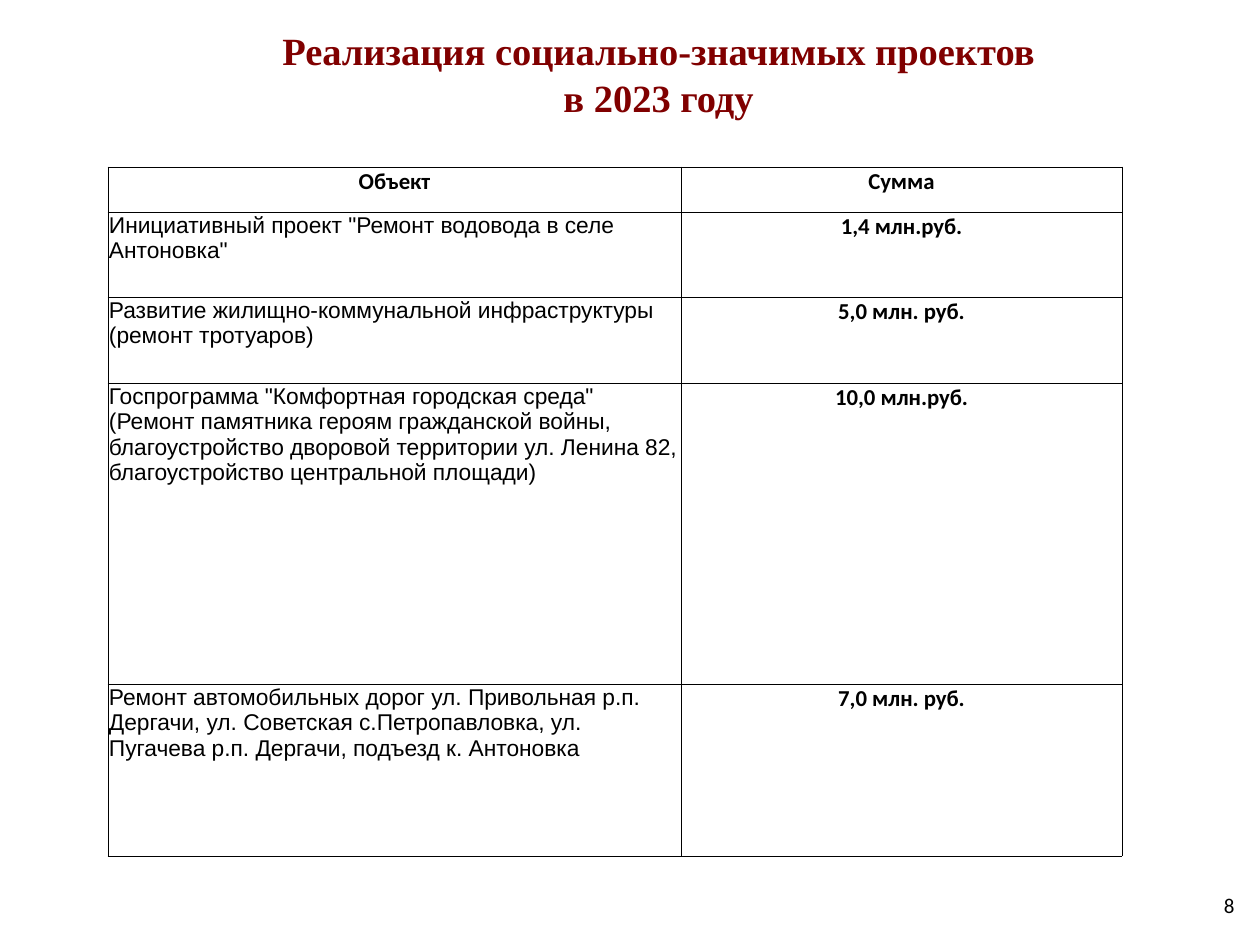
from dataclasses import dataclass

from lxml.etree import SubElement
from pptx import Presentation
from pptx.dml.color import RGBColor
from pptx.enum.text import MSO_ANCHOR, PP_ALIGN
from pptx.oxml.ns import qn
from pptx.table import Table, _Cell
from pptx.text.text import TextFrame
from pptx.util import Emu, Pt

PIXELS_PER_INCH = 126
BLACK = "000000"
MAROON = "800000"


@dataclass(frozen=True)
class TextStyle:
    font: str
    size: int
    color: str
    bold: bool
    align: PP_ALIGN


@dataclass(frozen=True)
class Project:
    name: str
    amount: str
    height: int


TITLE_STYLE = TextStyle("Times New Roman", 22, MAROON, True, PP_ALIGN.CENTER)
NUMBER_STYLE = TextStyle("Calibri", 12, BLACK, False, PP_ALIGN.RIGHT)
AMOUNT_STYLE = TextStyle("Calibri", 13, BLACK, True, PP_ALIGN.CENTER)
NAME_STYLE = TextStyle("Arial", 13, BLACK, False, PP_ALIGN.LEFT)

COLUMN_WIDTHS = (573, 441)
HEADER_HEIGHT = 45
PROJECTS = (
    Project('Инициативный проект "Ремонт водовода в селе Антоновка"', "1,4 млн.руб.", 85),
    Project(
        "Развитие жилищно-коммунальной инфраструктуры (ремонт тротуаров)",
        "5,0 млн. руб.",
        86,
    ),
    Project(
        'Госпрограмма "Комфортная городская среда" (Ремонт памятника героям '
        "гражданской войны, благоустройство дворовой территории ул. Ленина 82, "
        "благоустройство центральной площади)",
        "10,0 млн.руб.",
        301,
    ),
    Project(
        "Ремонт автомобильных дорог ул. Привольная р.п. Дергачи, ул. Советская "
        "с.Петропавловка, ул. Пугачева р.п. Дергачи, подъезд к. Антоновка",
        "7,0 млн. руб.",
        172,
    ),
)


def px(length: int) -> Emu:
    return Emu(round(length * 914400 / PIXELS_PER_INCH))


def rgb(value: str) -> RGBColor:
    return RGBColor.from_string(value)


def write(frame: TextFrame, text: str, style: TextStyle) -> None:
    frame.text = text
    frame.word_wrap = True
    for para in frame.paragraphs:
        para.alignment = style.align
        for span in para.runs:
            span.font.name = style.font
            span.font.size = Pt(style.size)
            span.font.bold = style.bold
            span.font.color.rgb = rgb(style.color)


def draw_borders(cell: _Cell) -> None:
    properties = cell._tc.get_or_add_tcPr()
    for position, side in enumerate(("lnL", "lnR", "lnT", "lnB")):
        line = SubElement(properties, qn(f"a:{side}"), w=str(Pt(0.5)))
        fill = SubElement(line, qn("a:solidFill"))
        SubElement(fill, qn("a:srgbClr"), val=BLACK)
        properties.insert(position, line)


def fill_cell(cell: _Cell, text: str, style: TextStyle) -> None:
    cell.margin_left = cell.margin_right = cell.margin_top = px(1)
    cell.margin_bottom = 0
    cell.vertical_anchor = MSO_ANCHOR.TOP
    cell.fill.background()
    draw_borders(cell)
    write(cell.text_frame, text, style)


def fill_table(table: Table) -> None:
    table.first_row = False
    table.horz_banding = False
    for column, width in zip(table.columns, COLUMN_WIDTHS):
        column.width = px(width)
    table.rows[0].height = px(HEADER_HEIGHT)
    for index, heading in enumerate(("Объект", "Сумма")):
        fill_cell(table.cell(0, index), heading, AMOUNT_STYLE)
    for index, project in enumerate(PROJECTS, start=1):
        table.rows[index].height = px(project.height)
        fill_cell(table.cell(index, 0), project.name, NAME_STYLE)
        fill_cell(table.cell(index, 1), project.amount, AMOUNT_STYLE)


def main() -> None:
    deck = Presentation()
    deck.slide_width, deck.slide_height = px(1260), px(945)
    page = deck.slides.add_slide(deck.slide_layouts[5])

    title = page.shapes.title
    title.left, title.top, title.width, title.height = px(111), px(16), px(1115), px(115)
    title.text_frame.vertical_anchor = MSO_ANCHOR.MIDDLE
    write(
        title.text_frame,
        "Реализация социально-значимых проектов\nв 2023 году",
        TITLE_STYLE,
    )
    title.text_frame.paragraphs[0]._p.get_or_add_pPr().set("marR", str(px(20)))

    table_height = HEADER_HEIGHT + sum(project.height for project in PROJECTS)
    frame = page.shapes.add_table(
        len(PROJECTS) + 1,
        len(COLUMN_WIDTHS),
        px(108),
        px(167),
        px(sum(COLUMN_WIDTHS)),
        px(table_height),
    )
    fill_table(frame.table)

    number = page.shapes.add_textbox(px(1196), px(880), px(51), px(50))
    number.text_frame.vertical_anchor = MSO_ANCHOR.MIDDLE
    write(number.text_frame, "8", NUMBER_STYLE)

    deck.save("out.pptx")


if __name__ == "__main__":
    main()
